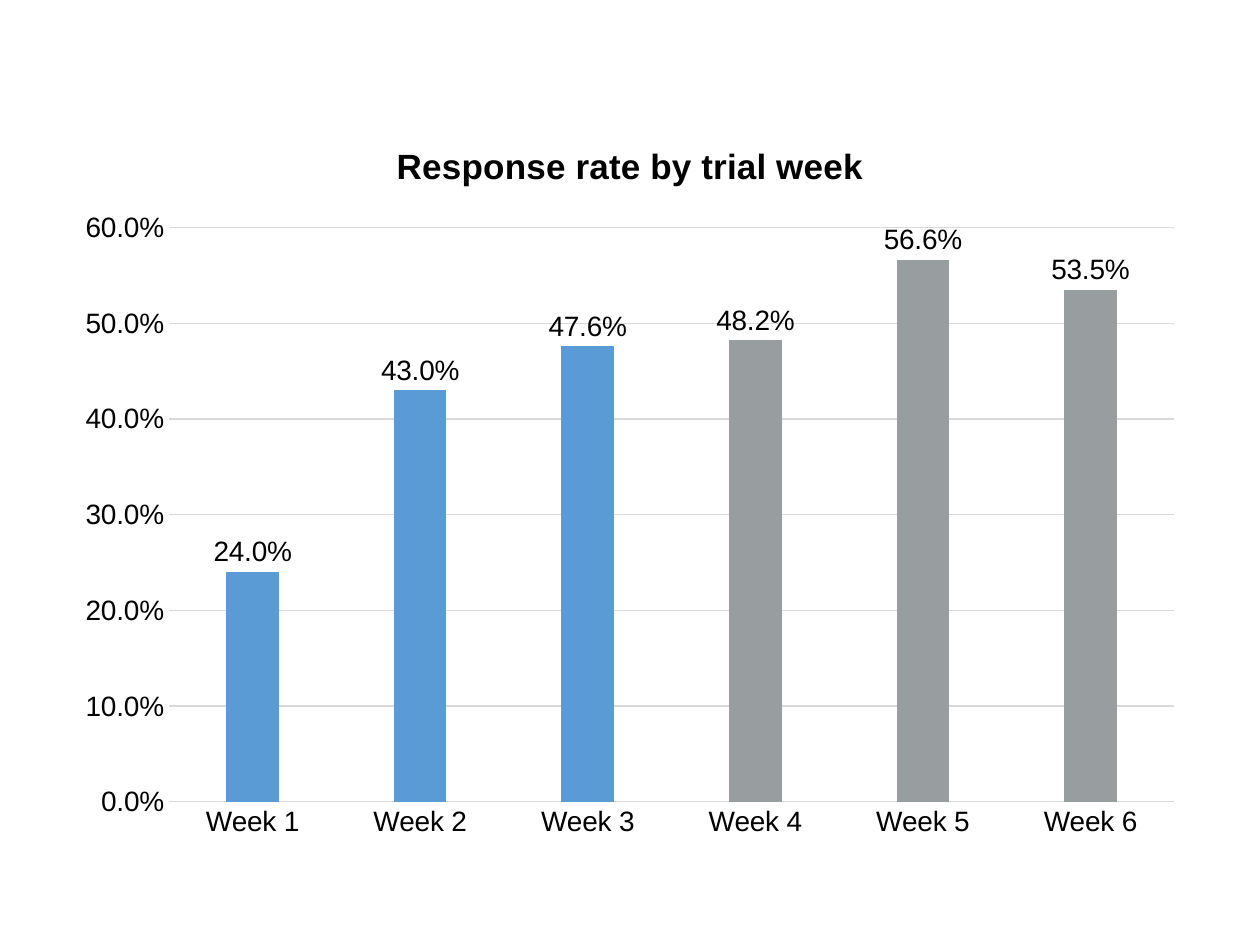
from dataclasses import dataclass

from pptx import Presentation
from pptx.chart.data import CategoryChartData
from pptx.dml.color import RGBColor
from pptx.enum.chart import XL_CHART_TYPE as ChartType
from pptx.enum.chart import XL_LABEL_POSITION as LabelPosition
from pptx.enum.chart import XL_TICK_MARK as TickMark
from pptx.util import Inches, Pt

# Content
TITLE = "Response rate by trial week"
SERIES_NAME = "Series 1"
RATES = [
    ("Week 1", 0.24),
    ("Week 2", 0.43),
    ("Week 3", 0.476),
    ("Week 4", 0.482),
    ("Week 5", 0.566),
    ("Week 6", 0.535),
]
FIRST_GRAY_WEEK = 3
PERCENT = "0.0%"


@dataclass(frozen=True)
class Theme:
    font: str = "Arial"
    text: RGBColor = RGBColor(0, 0, 0)
    background: RGBColor = RGBColor(255, 255, 255)
    blue: RGBColor = RGBColor.from_string("5B9BD5")
    gray: RGBColor = RGBColor.from_string("989D9F")
    grid: RGBColor = RGBColor.from_string("D9D9D9")
    title_size: int = 20
    label_size: int = 16
    base_size: int = 10
    line_width: float = 0.75


THEME = Theme()


def style_font(font, size, bold=False):
    font.name = THEME.font
    font.size = Pt(size)
    font.bold = bold
    font.color.rgb = THEME.text


def style_line(line):
    line.color.rgb = THEME.grid
    line.width = Pt(THEME.line_width)


def paint(fill, color):
    fill.solid()
    fill.fore_color.rgb = color


def add_rate_chart(page):
    data = CategoryChartData(number_format=PERCENT)
    data.categories = [week for week, _ in RATES]
    data.add_series(SERIES_NAME, [rate for _, rate in RATES])
    chart = page.shapes.add_chart(
        ChartType.COLUMN_CLUSTERED,
        Inches(0.5), Inches(0.92), Inches(9), Inches(5.84), data,
    ).chart
    style_font(chart.font, THEME.base_size)
    chart.has_legend = False

    # Title
    chart.has_title = True
    title = chart.chart_title
    title.include_in_layout = False
    title.text_frame.text = TITLE
    style_font(title.text_frame.paragraphs[0].runs[0].font, THEME.title_size, bold=True)

    # Axes
    weeks, rates = chart.category_axis, chart.value_axis
    for axis in (weeks, rates):
        axis.major_tick_mark = axis.minor_tick_mark = TickMark.NONE
        style_font(axis.tick_labels.font, THEME.label_size)
    style_line(weeks.format.line)
    rates.format.line.fill.background()
    rates.minimum_scale, rates.maximum_scale, rates.major_unit = 0, 0.6, 0.1
    rates.tick_labels.number_format = PERCENT
    rates.tick_labels.number_format_is_linked = False
    rates.has_major_gridlines = True
    style_line(rates.major_gridlines.format.line)

    # Columns
    plot = chart.plots[0]
    plot.gap_width = 219
    plot.overlap = -27
    plot.vary_by_categories = False
    series = plot.series[0]
    series.invert_if_negative = False
    paint(series.format.fill, THEME.blue)
    for index in range(FIRST_GRAY_WEEK, len(RATES)):
        paint(series.points[index].format.fill, THEME.gray)

    # Value labels
    labels = series.data_labels
    labels.show_value = True
    labels.position = LabelPosition.OUTSIDE_END
    labels.number_format = PERCENT
    labels.number_format_is_linked = False
    style_font(labels.font, THEME.label_size)


def main():
    deck = Presentation()
    deck.slide_width, deck.slide_height = Inches(10), Inches(7.5)
    page = deck.slides.add_slide(deck.slide_layouts[6])
    paint(page.background.fill, THEME.background)
    add_rate_chart(page)
    deck.save("out.pptx")


if __name__ == "__main__":
    main()
